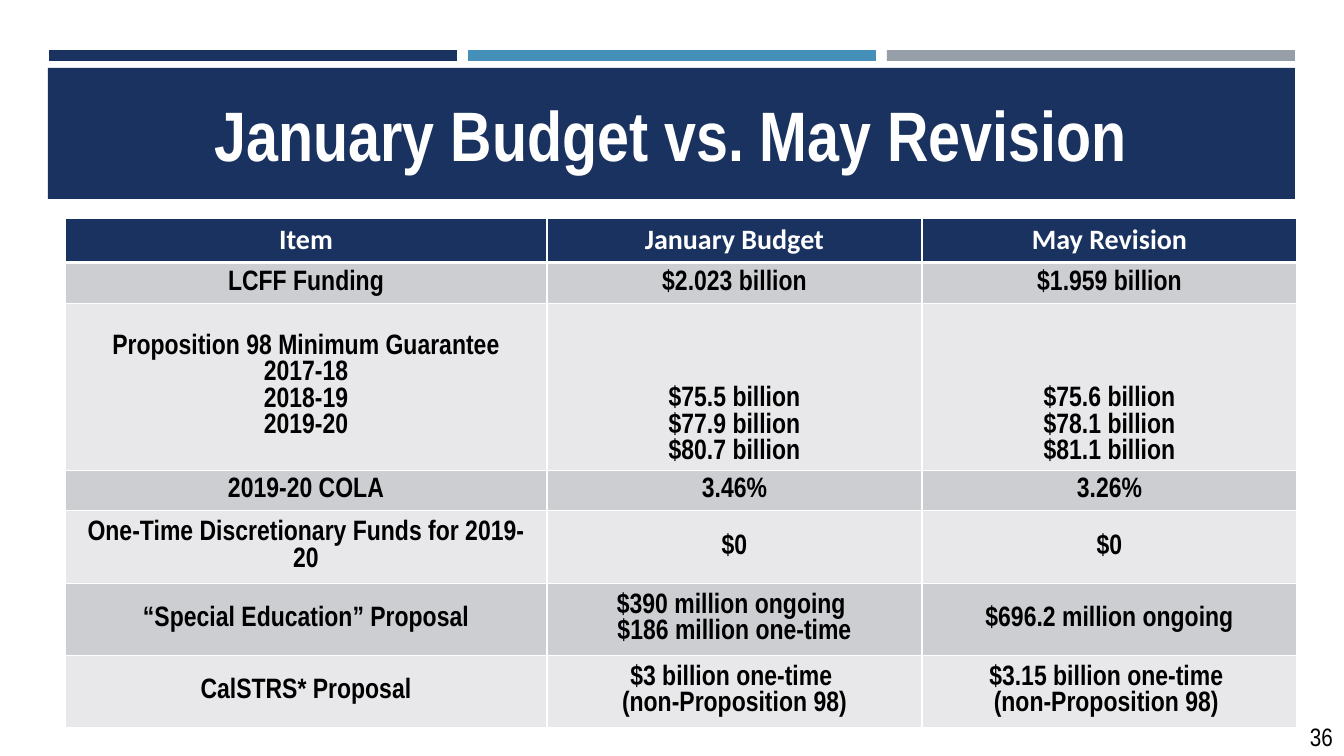
from dataclasses import dataclass

from lxml import etree
from pptx import Presentation
from pptx import util as u
from pptx.dml.color import RGBColor
from pptx.enum import shapes, text
from pptx.oxml import ns

TITLE = "January Budget vs. May Revision"
PAGE_NUMBER = "36"
ROWS = [
    ("Item", "January Budget", "May Revision"),
    ("LCFF Funding", "$2.023 billion", "$1.959 billion"),
    (
        "Proposition 98 Minimum Guarantee\n2017-18\n2018-19\n2019-20",
        "$75.5 billion\n$77.9 billion\n$80.7 billion",
        "$75.6 billion\n$78.1 billion\n$81.1 billion",
    ),
    ("2019-20 COLA", "3.46%", "3.26%"),
    ("One-Time Discretionary Funds for 2019-20", "$0", "$0"),
    (
        "“Special Education” Proposal",
        "$390 million ongoing \n$186 million one-time",
        "$696.2 million ongoing",
    ),
    (
        "CalSTRS* Proposal",
        "$3 billion one-time \n(non-Proposition 98)",
        "$3.15 billion one-time \n(non-Proposition 98) ",
    ),
]
GUARANTEE_ROW = 2
ROW_HEIGHTS = [44, 41, 167, 40, 73, 72, 72]
COLUMN_WIDTHS = [482, 375, 375]
TABLE_LEFT, TABLE_TOP = 65, 218
STRIPE_LEFT, STRIPE_TOP, STRIPE_WIDTH, STRIPE_HEIGHT, STRIPE_STEP = 49, 50, 408, 11, 419


@dataclass(frozen=True)
class Theme:
    navy: str = "1A3260"
    blue: str = "4590B8"
    gray: str = "969FA7"
    white: str = "FFFFFF"
    black: str = "000000"
    bands: tuple = ("CDCED2", "E8E8EA")
    body_font: str = "Arial Narrow"
    header_font: str = "Calibri"
    title_size: int = 50
    table_size: int = 20
    number_size: int = 18
    line_pitch: float = 18.8
    thin: int = 1
    thick: int = 3


theme = Theme()


def px(length):
    return u.Emu(round(length * 914400 / 100.8))


def color(value):
    return RGBColor.from_string(value)


def write(frame, words, font, size, ink, bold=True, align=text.PP_ALIGN.CENTER, pitch=None):
    frame.text = words
    for para in frame.paragraphs:
        para.alignment = align
        if pitch:
            para.line_spacing = u.Pt(pitch)
        for span in para.runs:
            span.font.name = font
            span.font.size = u.Pt(size)
            span.font.bold = bold
            span.font.color.rgb = color(ink)


def add_bar(page, left, top, width, height, fill):
    bar = page.shapes.add_shape(
        shapes.MSO_SHAPE.RECTANGLE, px(left), px(top), px(width), px(height)
    )
    bar.shadow.inherit = False
    bar.fill.solid()
    bar.fill.fore_color.rgb = color(fill)
    bar.line.fill.background()
    return bar


def set_borders(cell, widths):
    properties = cell._tc.get_or_add_tcPr()
    for position, (side, width) in enumerate(widths.items()):
        line = etree.Element(ns.qn(f"a:ln{side}"), w=str(u.Pt(width)))
        fill = etree.SubElement(line, ns.qn("a:solidFill"))
        etree.SubElement(fill, ns.qn("a:srgbClr"), val=theme.white)
        properties.insert(position, line)


def add_header(page):
    for index, fill in enumerate((theme.navy, theme.blue, theme.gray)):
        left = STRIPE_LEFT + index * STRIPE_STEP
        add_bar(page, left, STRIPE_TOP, STRIPE_WIDTH, STRIPE_HEIGHT, fill)
    banner = add_bar(page, 48, 68, 1247, 131, theme.navy)
    banner.text_frame.vertical_anchor = text.MSO_ANCHOR.MIDDLE
    banner.text_frame.word_wrap = True
    write(banner.text_frame, TITLE, theme.body_font, theme.title_size, theme.white)


def add_budget_table(page):
    table = page.shapes.add_table(
        len(ROWS), len(COLUMN_WIDTHS), px(TABLE_LEFT), px(TABLE_TOP),
        px(sum(COLUMN_WIDTHS)), px(sum(ROW_HEIGHTS)),
    ).table
    for column, width in zip(table.columns, COLUMN_WIDTHS):
        column.width = px(width)
    for row, height in zip(table.rows, ROW_HEIGHTS):
        row.height = px(height)
    for r, values in enumerate(ROWS):
        header = r == 0
        for c, words in enumerate(values):
            cell = table.cell(r, c)
            low = r == GUARANTEE_ROW and c > 0
            cell.vertical_anchor = text.MSO_ANCHOR.BOTTOM if low else text.MSO_ANCHOR.MIDDLE
            cell.fill.solid()
            cell.fill.fore_color.rgb = color(theme.navy if header else theme.bands[(r - 1) % 2])
            write(
                cell.text_frame, words,
                theme.header_font if header else theme.body_font, theme.table_size,
                theme.white if header else theme.black,
                pitch=None if header else theme.line_pitch,
            )
            set_borders(cell, {
                "L": theme.thin,
                "R": theme.thin,
                "T": theme.thick if r == 1 else theme.thin,
                "B": theme.thick if header else theme.thin,
            })


def add_page_number(page):
    box = page.shapes.add_textbox(px(1300), px(716), px(43), px(40))
    box.text_frame.word_wrap = False
    write(
        box.text_frame, PAGE_NUMBER, theme.body_font, theme.number_size, theme.black,
        bold=False, align=text.PP_ALIGN.LEFT,
    )


def main():
    deck = Presentation()
    deck.slide_width, deck.slide_height = px(1344), px(756)
    page = deck.slides.add_slide(deck.slide_layouts[6])
    add_header(page)
    add_budget_table(page)
    add_page_number(page)
    deck.save("out.pptx")


if __name__ == "__main__":
    main()
